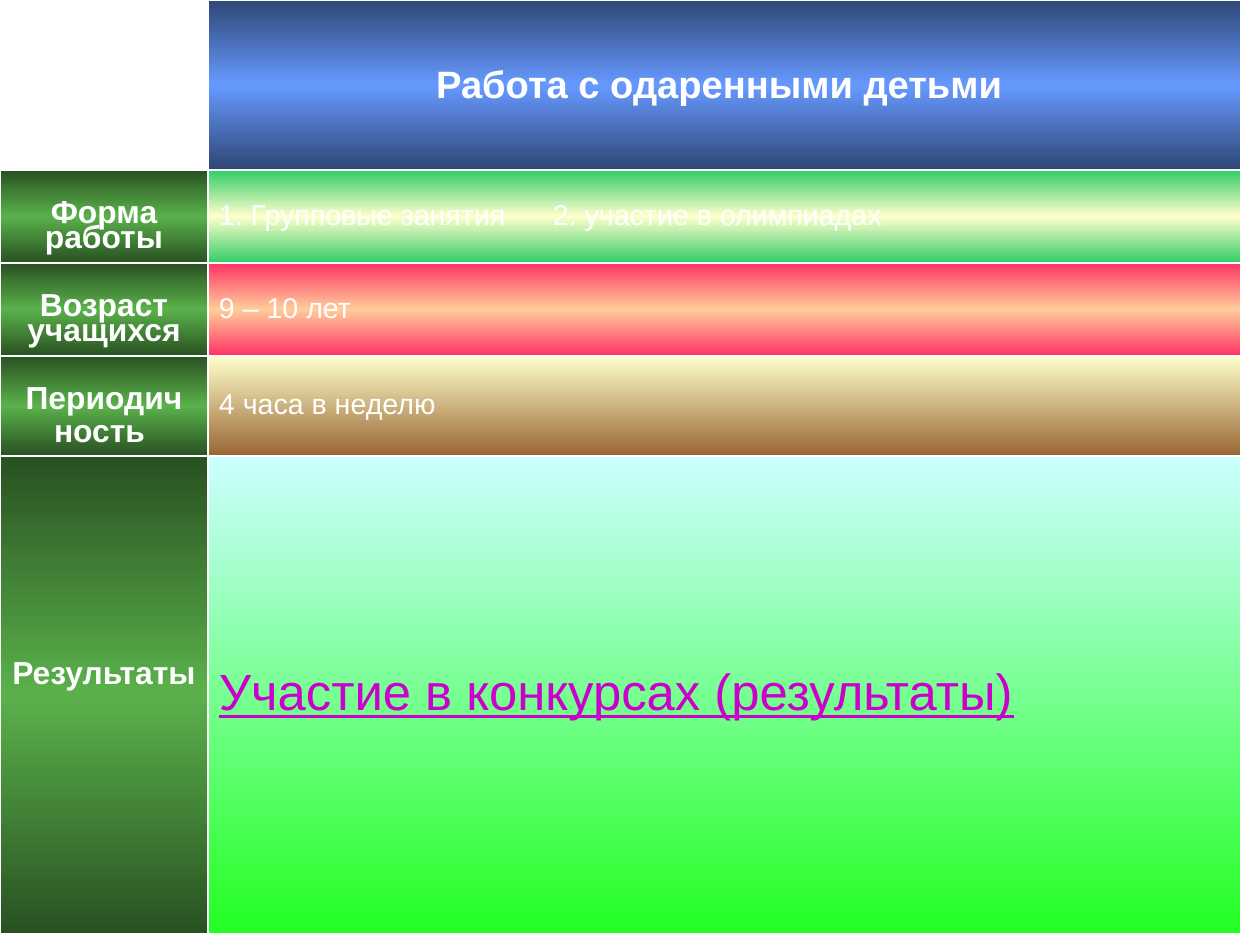
from lxml import etree
from pptx import Presentation
from pptx.dml.color import RGBColor
from pptx.enum.text import MSO_ANCHOR, PP_ALIGN
from pptx.oxml.ns import qn
from pptx.util import Pt

PX = 8000  # EMU in one px
CENTER, LEFT = PP_ALIGN.CENTER, PP_ALIGN.LEFT
TOP, MIDDLE = MSO_ANCHOR.TOP, MSO_ANCHOR.MIDDLE

WHITE = RGBColor(0xFF, 0xFF, 0xFF)
PURPLE = RGBColor(0xCC, 0x00, 0xCC)
NAVY = RGBColor(0x2F, 0x46, 0x75)
BLUE = RGBColor(0x66, 0x99, 0xFF)
FOREST = RGBColor(0x29, 0x51, 0x22)
LEAF = RGBColor(0x5A, 0xB1, 0x4B)
GREEN = RGBColor(0x33, 0xCC, 0x66)
CREAM = RGBColor(0xFF, 0xFF, 0xCC)
ROSE = RGBColor(0xFF, 0x33, 0x66)
PEACH = RGBColor(0xFF, 0xCC, 0x99)
BROWN = RGBColor(0x99, 0x66, 0x33)
ICE = RGBColor(0xCC, 0xFF, 0xFF)
LIME = RGBColor(0x23, 0xFF, 0x23)

COLS = [208, 1033]
HEAD = 170
TAB = 334  # start of the second form of work
# height, label lines, label top inset, text, size, colour, gradient
ROWS = [
    (93, ["Форма работы"], 33,
     "1. Групповые занятия\t2. участие в олимпиадах", 18, WHITE,
     [GREEN, CREAM, GREEN]),
    (93, ["Возраст учащихся"], 33, "9 – 10 лет", 18, WHITE,
     [ROSE, PEACH, ROSE]),
    (100, ["Периодич", "ность "], 33, "4 часа в неделю", 18, WHITE,
     [CREAM, BROWN]),
    (478, ["Результаты "], 209, "Участие в конкурсах (результаты)", 32, PURPLE,
     [ICE, LIME]),
]


def add(parent, tag, **attrs):
    node = etree.SubElement(parent, qn(tag))
    for key, val in attrs.items():
        node.set(key, str(val))
    return node


def paint(cell, tones):
    """White borders first, then a vertical gradient."""
    props = cell._tc.get_or_add_tcPr()
    for side in ("a:lnL", "a:lnR", "a:lnT", "a:lnB"):
        line = add(props, side, w=Pt(1))
        add(add(line, "a:solidFill"), "a:srgbClr", val=WHITE)
    if not tones:
        add(props, "a:noFill")
        return
    grad = add(props, "a:gradFill", rotWithShape=1)
    stops = add(grad, "a:gsLst")
    for i, tone in enumerate(tones):
        stop = add(stops, "a:gs", pos=100000 * i // (len(tones) - 1))
        add(stop, "a:srgbClr", val=tone)
    add(grad, "a:lin", ang=5400000, scaled=0)


def write(cell, lines, size, tone, bold, align, anchor, space, top=6):
    cell.margin_left = cell.margin_right = 11 * PX
    cell.margin_top, cell.margin_bottom = top * PX, 6 * PX
    cell.vertical_anchor = anchor
    frame = cell.text_frame
    for i, line in enumerate(lines):
        para = frame.add_paragraph() if i else frame.paragraphs[0]
        para.alignment, para.line_spacing = align, space
        para.space_before = Pt(5 if i else 0)
        if "\t" in line:
            tabs = add(para._p.get_or_add_pPr(), "a:tabLst")
            add(tabs, "a:tab", pos=TAB * PX, algn="l")
        run = para.add_run()
        run.text = line
        font = run.font
        font.name, font.size, font.bold = "Arial", Pt(size), bold
        font.color.rgb = tone
        font.underline = tone == PURPLE


def plan(slide, x, y):
    """Table of the work plan with its corner at x, y."""
    highs = [HEAD] + [row[0] for row in ROWS]
    frame = slide.shapes.add_table(len(highs), len(COLS), x * PX, y * PX,
                                   sum(COLS) * PX, sum(highs) * PX)
    table = frame.table
    table.first_row = table.horz_banding = False
    for col, width in zip(table.columns, COLS):
        col.width = width * PX
    for row, high in zip(table.rows, highs):
        row.height = high * PX

    # Heading row
    paint(table.cell(0, 0), [])
    head = table.cell(0, 1)
    paint(head, [NAVY, BLUE, NAVY])
    write(head, ["Работа с одаренными детьми "], 24, WHITE, True,
          CENTER, MIDDLE, 1.0)

    # Labels and their texts
    for i, (_, label, top, text, size, tone, tones) in enumerate(ROWS, 1):
        name, body = table.cell(i, 0), table.cell(i, 1)
        paint(name, [FOREST, LEAF, FOREST])
        write(name, label, 20, WHITE, True, CENTER, TOP, 0.71, top)
        paint(body, tones)
        write(body, [text], size, tone, False, LEFT, MIDDLE, 0.93)


def main():
    deck = Presentation()
    deck.slide_width, deck.slide_height = 1260 * PX, 945 * PX
    slide = deck.slides.add_slide(deck.slide_layouts[6])
    plan(slide, 0, 0)
    deck.save("out.pptx")


if __name__ == "__main__":
    main()
